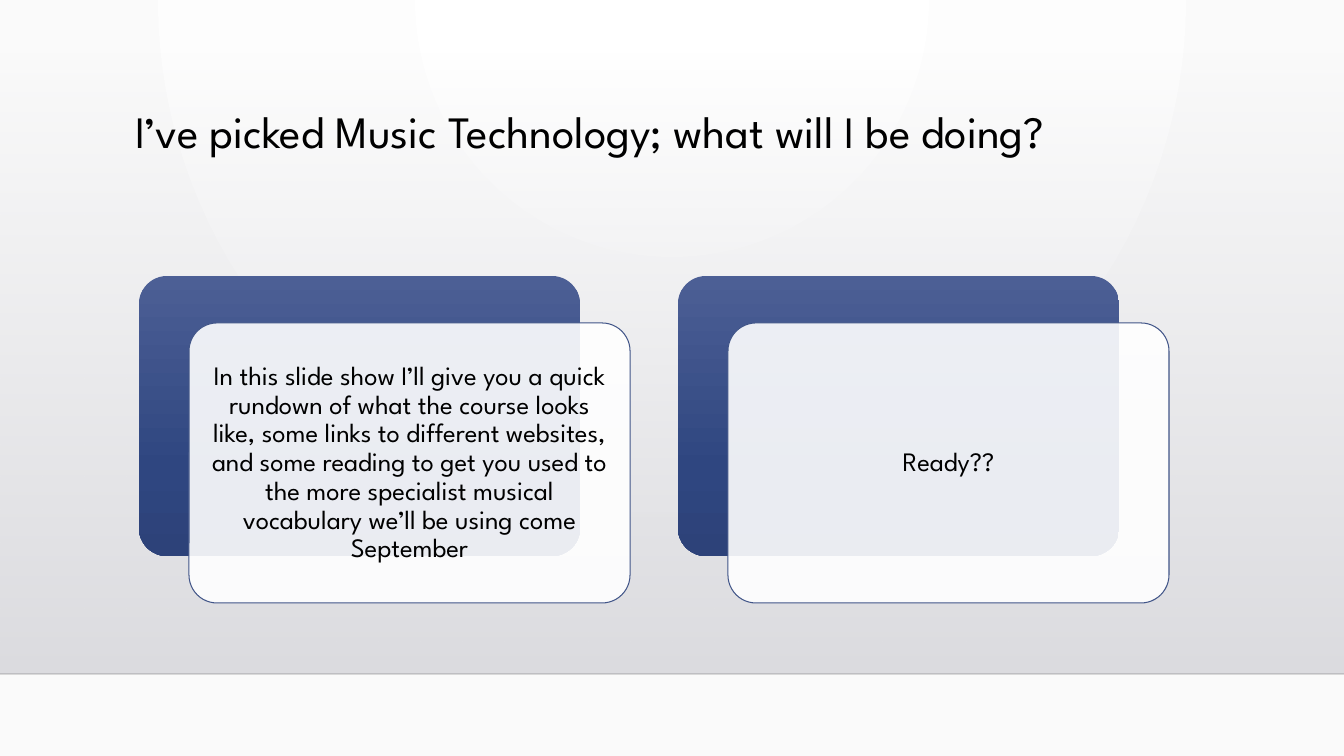
from pptx import Presentation
from pptx.dml.color import RGBColor
from pptx.enum.shapes import MSO_CONNECTOR, MSO_SHAPE
from pptx.enum.text import MSO_ANCHOR, MSO_AUTO_SIZE, PP_ALIGN
from pptx.oxml.ns import qn
from pptx.util import Emu, Pt
from lxml.etree import SubElement

TITLE = "I’ve picked Music Technology; what will I be doing?"
CARDS = [
    "In this slide show I’ll give you a quick rundown of what the course looks "
    "like, some links to different websites, and some reading to get you used to "
    "the more specialist musical vocabulary we’ll be using come September",
    "Ready??",
]
FONT = "League Spartan"
COLOURS = {"text": "000000", "card": "FFFFFF", "outline": "415588", "floor": "000001"}
# Gradient stops: position %, colour, opacity %
GLOW = [(0, "FFFFFF", 100), (100, "FAFAFA", 100)]
WALL = [(0, "DCDCE0", 0), (100, "DEDEE2", 100)]
PANEL = [(0, "4C5F95", 100), (69, "2F4680", 100), (100, "2D4279", 100)]

SLIDE_W, SLIDE_H = 1344, 756
WALL_TOP, FLOOR = 51, 674
TITLE_BOX = (125, 105, 1058, 116)
CARD_LEFT, CARD_TOP, CARD_W, CARD_H = 139, 276, 441, 280
CARD_STEP, SHIFT_X, SHIFT_Y = 539, 50, 47
TEXT_INSET, MARGIN = 8, 8


def px(length):
    return Emu(round(length * 914400 / 100.8))


def colour(name):
    return RGBColor.from_string(COLOURS[name])


def add_alpha(colour_element, opacity):
    SubElement(colour_element, qn("a:alpha"), val=str(opacity * 1000))


def set_gradient(owner, fill, stops, glow=False):
    """Fill downwards, or as circles around the top centre when glow is set."""
    fill.gradient()
    gradient = owner.xpath(".//a:gradFill")[0]
    for child in list(gradient):
        gradient.remove(child)
    stop_list = SubElement(gradient, qn("a:gsLst"))
    for position, value, opacity in stops:
        stop = SubElement(stop_list, qn("a:gs"), pos=str(position * 1000))
        tint = SubElement(stop, qn("a:srgbClr"), val=value)
        if opacity < 100:
            add_alpha(tint, opacity)
    if glow:
        circle = SubElement(gradient, qn("a:path"), path="circle")
        SubElement(circle, qn("a:fillToRect"), l="43000", t="0", r="43000", b="100000")
    else:
        SubElement(gradient, qn("a:lin"), ang="5400000", scaled="0")


def add_block(page, kind, left, top, width, height):
    block = page.shapes.add_shape(kind, px(left), px(top), px(width), px(height))
    block.shadow.inherit = False
    block.line.fill.background()
    if kind == MSO_SHAPE.ROUNDED_RECTANGLE:
        block.adjustments[0] = 0.1
    return block


def write(box, text, size, align, anchor, margin):
    frame = box.text_frame
    frame.word_wrap = True
    frame.auto_size = MSO_AUTO_SIZE.NONE
    frame.vertical_anchor = anchor
    frame.margin_left = frame.margin_right = px(margin[0])
    frame.margin_top = frame.margin_bottom = px(margin[1])
    para = frame.paragraphs[0]
    para.alignment = align
    para.line_spacing = 0.9
    span = para.add_run()
    span.text = text
    span.font.name = FONT
    span.font.size = Pt(size)
    span.font.color.rgb = colour("text")


def add_backdrop(page):
    set_gradient(page.element, page.background.fill, GLOW, glow=True)
    wall = add_block(page, MSO_SHAPE.RECTANGLE, 0, WALL_TOP, SLIDE_W, FLOOR - WALL_TOP)
    set_gradient(wall.element, wall.fill, WALL)
    floor = page.shapes.add_connector(
        MSO_CONNECTOR.STRAIGHT, px(0), px(FLOOR), px(SLIDE_W), px(FLOOR))
    floor.line.width = Pt(1)
    floor.line.color.rgb = colour("floor")
    add_alpha(floor.element.xpath(".//a:ln//a:srgbClr")[0], 20)
    SubElement(floor.element.spPr, qn("a:effectLst"))


def add_card(page, left, text):
    panel = add_block(page, MSO_SHAPE.ROUNDED_RECTANGLE, left, CARD_TOP, CARD_W, CARD_H)
    set_gradient(panel.element, panel.fill, PANEL)

    x, y = left + SHIFT_X, CARD_TOP + SHIFT_Y
    card = add_block(page, MSO_SHAPE.ROUNDED_RECTANGLE, x, y, CARD_W, CARD_H)
    card.fill.solid()
    card.fill.fore_color.rgb = colour("card")
    add_alpha(card.element.xpath("./p:spPr/a:solidFill/a:srgbClr")[0], 90)
    card.line.color.rgb = colour("outline")
    card.line.width = Pt(0.75)

    box = page.shapes.add_textbox(
        px(x + TEXT_INSET), px(y + TEXT_INSET),
        px(CARD_W - 2 * TEXT_INSET), px(CARD_H - 2 * TEXT_INSET))
    write(box, text, size=19, align=PP_ALIGN.CENTER, anchor=MSO_ANCHOR.MIDDLE,
          margin=(MARGIN, MARGIN))


def main():
    deck = Presentation()
    deck.slide_width, deck.slide_height = px(SLIDE_W), px(SLIDE_H)
    page = deck.slides.add_slide(deck.slide_layouts[5])
    add_backdrop(page)

    title = page.shapes.title
    title.left, title.top, title.width, title.height = map(px, TITLE_BOX)
    write(title, TITLE, size=32, align=PP_ALIGN.LEFT, anchor=MSO_ANCHOR.TOP, margin=(10, 5))
    tree = page.shapes.element
    tree.remove(title.element)
    tree.append(title.element)

    for index, text in enumerate(CARDS):
        add_card(page, CARD_LEFT + index * CARD_STEP, text)
    deck.save("out.pptx")


if __name__ == "__main__":
    main()
